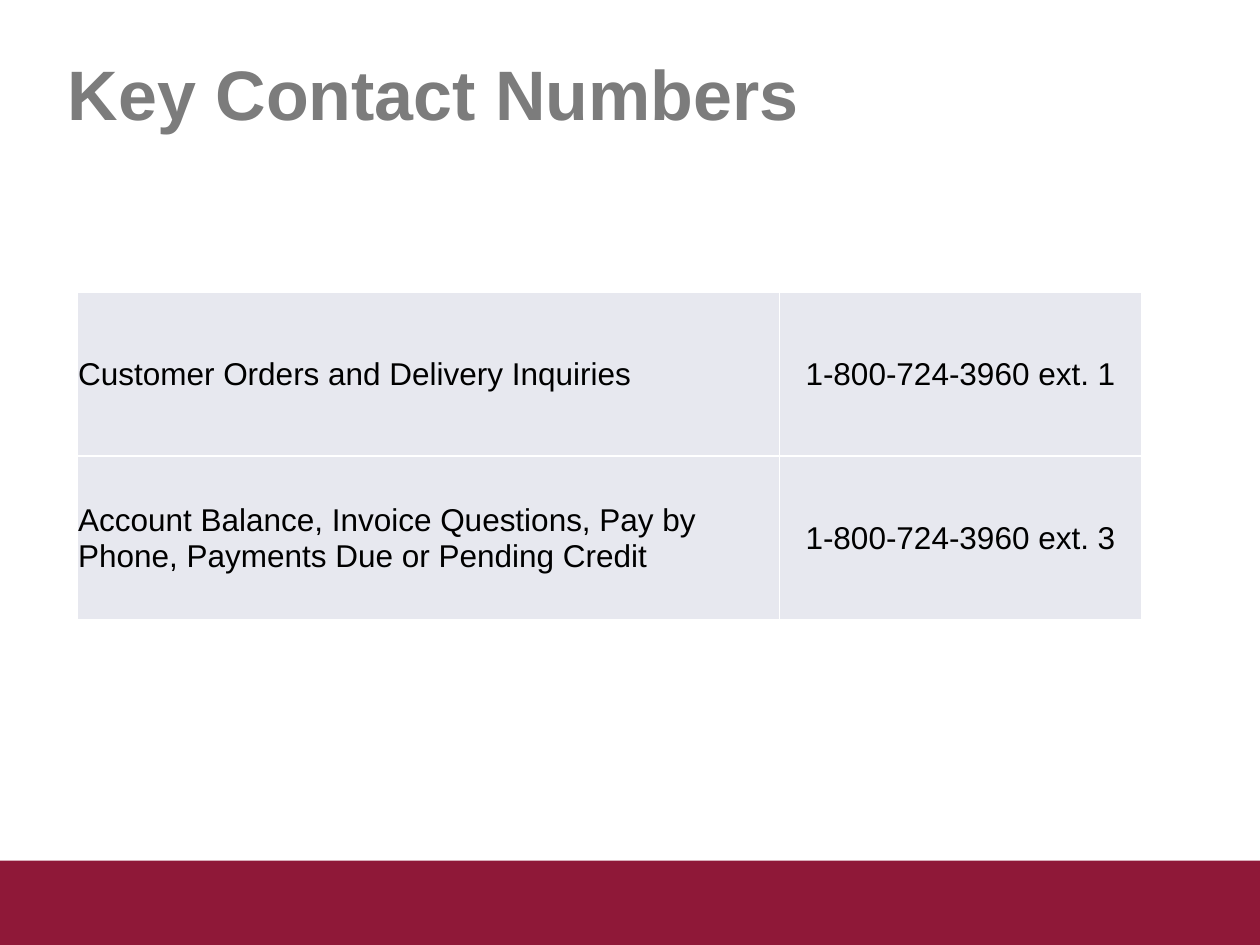
from dataclasses import dataclass

from lxml.etree import SubElement
from pptx import Presentation
from pptx.dml.color import RGBColor
from pptx.enum.shapes import MSO_SHAPE
from pptx.enum.text import MSO_ANCHOR, PP_ALIGN
from pptx.oxml.ns import qn
from pptx.util import Inches, Pt


@dataclass(frozen=True)
class Theme:
    font: str = "Arial"
    title_size: int = 40
    body_size: int = 18
    title: str = "7C7C7C"
    body: str = "000000"
    band: str = "8F1838"
    cell: str = "E7E8EF"
    rule: str = "FFFFFF"


class ContactSlide:
    """Draws styled elements on one slide, placed in shares of its size."""

    def __init__(self, deck, theme):
        self.deck, self.theme = deck, theme
        self.slide = deck.slides.add_slide(deck.slide_layouts[6])

    def place(self, left, top, width, height):
        across, down = self.deck.slide_width, self.deck.slide_height
        return [round(share * side) for share, side in
                zip((left, top, width, height), (across, down) * 2)]

    def set_text(self, frame, wording, size, color, **paragraph_format):
        paragraph = frame.paragraphs[0]
        paragraph.text = wording
        for key, value in paragraph_format.items():
            setattr(paragraph, key, value)
        font = paragraph.runs[0].font
        font.name, font.size = self.theme.font, Pt(size)
        font.color.rgb = RGBColor.from_string(color)
        return font

    def band(self, *area):
        footer = self.slide.shapes.add_shape(MSO_SHAPE.RECTANGLE, *self.place(*area))
        footer.shadow.inherit = False
        footer.fill.solid()
        footer.fill.fore_color.rgb = RGBColor.from_string(self.theme.band)
        footer.line.fill.background()

    def title(self, wording, *area):
        frame = self.slide.shapes.add_textbox(*self.place(*area)).text_frame
        frame.word_wrap, frame.vertical_anchor = True, MSO_ANCHOR.MIDDLE
        font = self.set_text(frame, wording, self.theme.title_size,
                             self.theme.title, line_spacing=0.9)
        font.bold = True

    def table(self, rows, column_shares, *area):
        left, top, width, height = self.place(*area)
        contacts = self.slide.shapes.add_table(
            len(rows), len(column_shares), left, top, width, height).table
        contacts.first_row = contacts.horz_banding = False
        for column, share in zip(contacts.columns, column_shares):
            column.width = round(width * share)
        for row_index, row in enumerate(rows):
            for column_index, wording in enumerate(row):
                align = PP_ALIGN.CENTER if column_index else PP_ALIGN.LEFT
                self.cell(contacts.cell(row_index, column_index), wording, align)

    def cell(self, cell, wording, align):
        inset = Inches(0.01)
        cell_format = {"margin_left": inset, "margin_top": inset,
                       "margin_right": inset, "margin_bottom": 0,
                       "vertical_anchor": MSO_ANCHOR.MIDDLE}
        for key, value in cell_format.items():
            setattr(cell, key, value)
        self.set_text(cell.text_frame, wording, self.theme.body_size,
                      self.theme.body, alignment=align)
        properties = cell._tc.get_or_add_tcPr()
        for side in ("L", "R", "T", "B"):
            edge = SubElement(properties, qn(f"a:ln{side}"), w=str(Pt(1)))
            paint = SubElement(edge, qn("a:solidFill"))
            SubElement(paint, qn("a:srgbClr"), val=self.theme.rule)
        cell.fill.solid()
        cell.fill.fore_color.rgb = RGBColor.from_string(self.theme.cell)


def main():
    deck = Presentation()
    deck.slide_width, deck.slide_height = Inches(10), Inches(7.5)
    page = ContactSlide(deck, Theme())
    page.band(0, 6.83 / 7.5, 1, 0.67 / 7.5)
    page.title("Key Contact Numbers", 0.44 / 10, 0.4 / 7.5, 8.62 / 10, 0.76 / 7.5)
    contacts = [
        ("Customer Orders and Delivery Inquiries", "1-800-724-3960 ext. 1"),
        ("Account Balance, Invoice Questions, Pay by Phone, "
         "Payments Due or Pending Credit", "1-800-724-3960 ext. 3"),
    ]
    page.table(contacts, (0.66, 0.34), 0.61 / 10, 2.32 / 7.5, 8.45 / 10, 2.6 / 7.5)
    deck.save("out.pptx")


if __name__ == "__main__":
    main()
